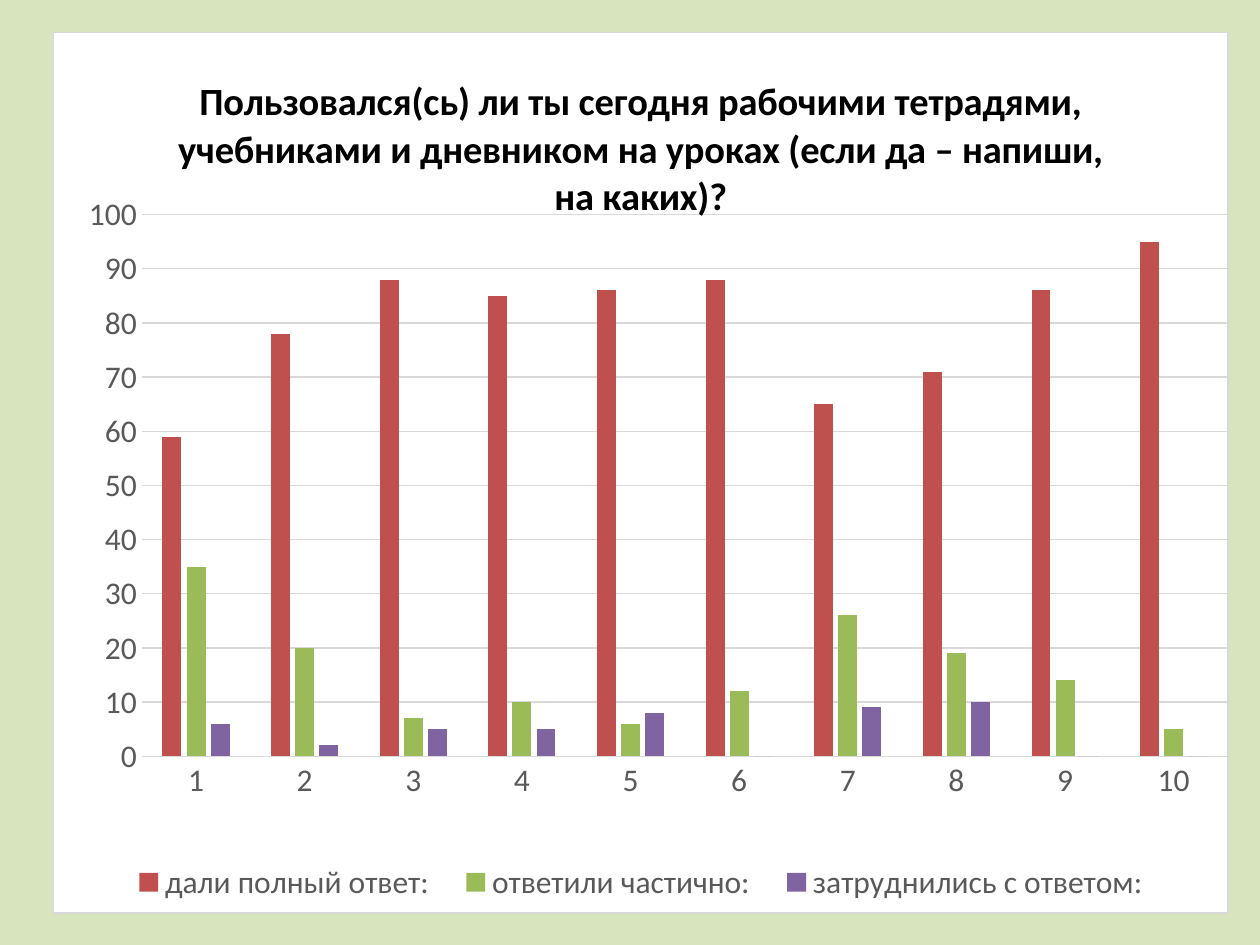
from pptx import Presentation
from pptx.chart.data import CategoryChartData as Data
from pptx.dml.color import RGBColor
from pptx.enum.chart import XL_CHART_TYPE as Kind, XL_LEGEND_POSITION as Pos, XL_TICK_MARK as Tick
from pptx.oxml import parse_xml as make
from pptx.oxml.ns import qn, nsdecls
from pptx.util import Cm, Pt

GREY, EDGE = "595959", "D9D9D9"
TITLE = ("Пользовался(сь) ли ты сегодня рабочими тетрадями, учебниками "
         "и дневником на уроках (если да – напиши, на каких)?")
ROWS = [
    ("дали полный ответ:", "C0504D", (59, 78, 88, 85, 86, 88, 65, 71, 86, 95)),
    ("ответили частично:", "9BBB59", (35, 20, 7, 10, 6, 12, 26, 19, 14, 5)),
    ("затруднились с ответом:", "8064A2", (6, 2, 5, 5, 8, 0, 9, 10, 0, 0)),
]


def rgb(code):
    """Turn a hex string into a colour."""
    return RGBColor.from_string(code)


def put(item, form):
    """Set the attributes of an item from a dict."""
    for key, val in form.items():
        setattr(item, key, val)


def paint(fill, code):
    """Make a fill solid in one colour."""
    fill.solid()
    fill.fore_color.rgb = rgb(code)


def type_in(font, code, size=18, bold=False):
    """Set the look of a font."""
    put(font, {"name": "Calibri", "size": Pt(size), "bold": bold})
    font.color.rgb = rgb(code)


def rule(line):
    """Draw a thin pale line."""
    line.width = Pt(0.75)
    line.color.rgb = rgb(EDGE)


def place(node, index, inner=False, **box):
    """Give a chart part a manual layout in fractions of the chart."""
    for old in node.findall(qn("c:layout")):
        node.remove(old)
    aim = '<c:layoutTarget val="inner"/>' if inner else ""
    modes = "".join(f'<c:{key}Mode val="edge"/>' for key in "xy")
    sizes = "".join(f'<c:{key} val="{val}"/>' for key, val in box.items())
    node.insert(index, make(
        f'<c:layout {nsdecls("c")}><c:manualLayout>{aim}{modes}{sizes}'
        "</c:manualLayout></c:layout>"))


def frame(chart, fill, edge):
    """Fill and outline the chart area."""
    hue = '<a:solidFill><a:srgbClr val="{}"/></a:solidFill>'.format
    chart.element.find(qn("c:chart")).addnext(make(
        f'<c:spPr {nsdecls("c", "a")}>{hue(fill)}'
        f'<a:ln w="{Pt(0.75)}">{hue(edge)}</a:ln></c:spPr>'))


def add_bars(slide):
    """Add the clustered columns and return the chart."""
    data = Data()
    data.categories = [str(n) for n in range(1, 11)]
    for name, _, vals in ROWS:
        data.add_series(name, vals)
    chart = slide.shapes.add_chart(
        Kind.COLUMN_CLUSTERED, Cm(1.07), Cm(0.64), Cm(23.7), Cm(17.78), data).chart
    type_in(chart.font, "000000")
    frame(chart, "FFFFFF", EDGE)
    plot = chart.plots[0]
    put(plot, {"gap_width": 219, "overlap": -27, "vary_by_categories": False})
    for bar, (_, code, _) in zip(plot.series, ROWS):
        paint(bar.format.fill, code)
    place(chart.element.find(".//" + qn("c:plotArea")), 0, inner=True,
          x=0.075, y=0.207, w=0.925, h=0.615)
    return chart


def set_axes(chart):
    """Style both axes and the grid."""
    for axis in (chart.category_axis, chart.value_axis):
        put(axis, {"major_tick_mark": Tick.NONE, "minor_tick_mark": Tick.NONE})
        type_in(axis.tick_labels.font, GREY)
    rule(chart.category_axis.format.line)
    put(chart.value_axis, {"minimum_scale": 0, "maximum_scale": 100,
                           "major_unit": 10, "has_major_gridlines": True})
    chart.value_axis.format.line.fill.background()
    rule(chart.value_axis.major_gridlines.format.line)


def set_title(chart):
    """Write the chart title."""
    chart.has_title = True
    text = chart.chart_title.text_frame
    text.text = TITLE
    type_in(text.paragraphs[0].runs[0].font, "000000", 22, True)
    chart.chart_title.include_in_layout = False
    place(chart.chart_title.element if hasattr(chart.chart_title, "element")
          else chart.element.find(".//" + qn("c:title")), 1, x=0.1, y=0.04)


def set_legend(chart):
    """Show the legend along the bottom."""
    chart.has_legend = True
    put(chart.legend, {"position": Pos.BOTTOM, "include_in_layout": False})
    type_in(chart.legend.font, GREY)
    place(chart.element.find(".//" + qn("c:legend")), 1,
          x=0.05, y=0.94, w=0.9, h=0.05)


def main():
    """Build the slide and save it."""
    deck = Presentation()
    put(deck, {"slide_width": Cm(25.4), "slide_height": Cm(19.05)})
    slide = deck.slides.add_slide(deck.slide_layouts[6])
    paint(slide.background.fill, "D7E4BD")
    chart = add_bars(slide)
    set_axes(chart)
    set_title(chart)
    set_legend(chart)
    deck.save("out.pptx")


if __name__ == "__main__":
    main()
